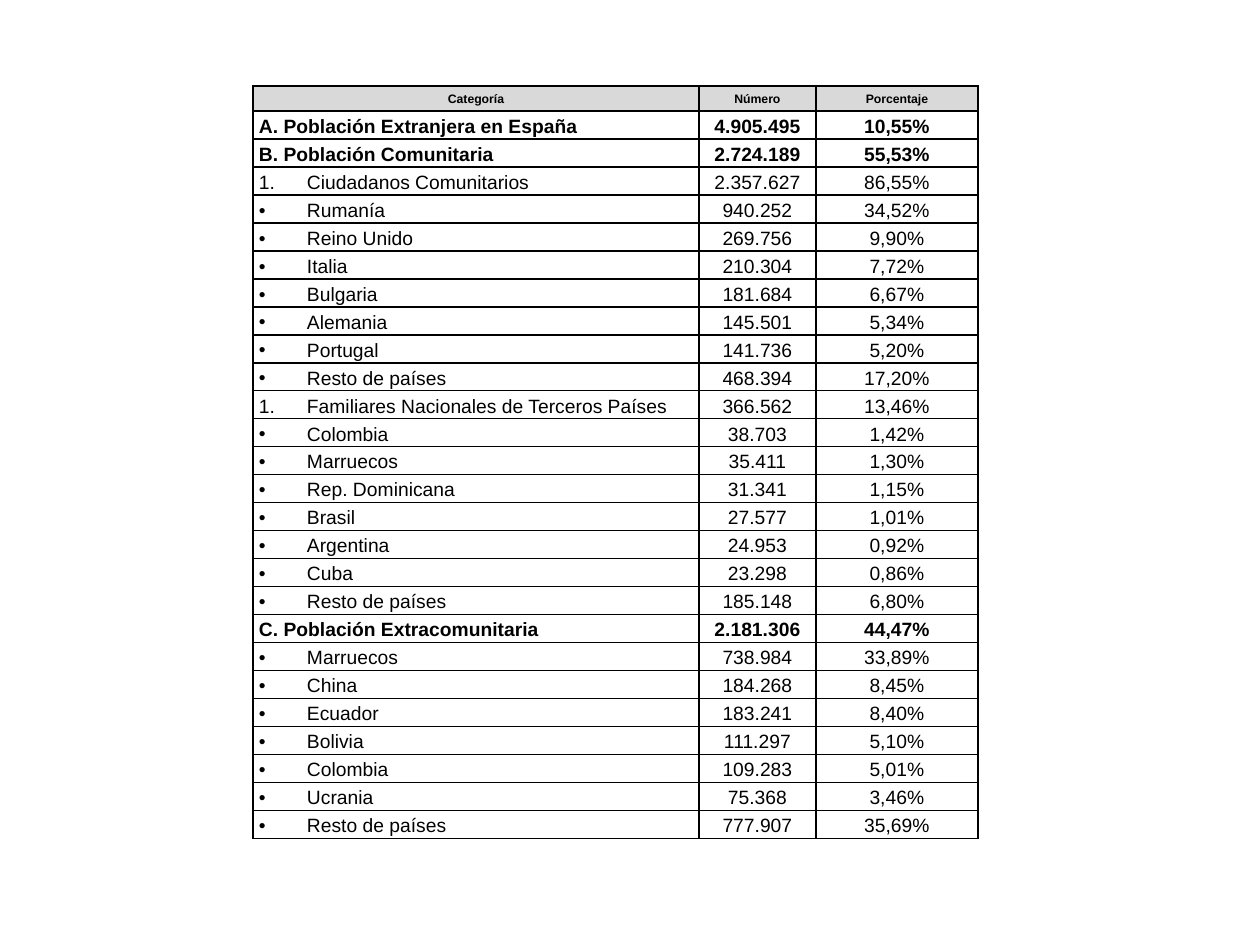
from lxml.etree import SubElement
from pptx import Presentation
from pptx.dml.color import RGBColor
from pptx.enum.text import MSO_ANCHOR, PP_ALIGN
from pptx.oxml import parse_xml
from pptx.oxml.ns import nsdecls, qn
from pptx.util import Emu, Pt

EMU_PER_PX = 914400 // 126
BLACK = RGBColor(0x00, 0x00, 0x00)
HEADER_GREY = RGBColor(0xD9, 0xD9, 0xD9)

TABLE_LEFT, TABLE_TOP = 253, 86
COLUMN_WIDTHS = (446, 117, 162)
HEADER_HEIGHT, ROW_HEIGHT = 25, 28
CELL_MARGIN, INDENT = 6, 48

HEADINGS = ("Categoría", "Número", "Porcentaje")
SECTION, NUMBERED, BULLETED = "section", "numbered", "bulleted"
POPULATION = (
    (SECTION, "A. Población Extranjera en España", "4.905.495", "10,55%"),
    (SECTION, "B. Población Comunitaria", "2.724.189", "55,53%"),
    (NUMBERED, "Ciudadanos Comunitarios", "2.357.627", "86,55%"),
    (BULLETED, "Rumanía", "940.252", "34,52%"),
    (BULLETED, "Reino Unido", "269.756", "9,90%"),
    (BULLETED, "Italia", "210.304", "7,72%"),
    (BULLETED, "Bulgaria", "181.684", "6,67%"),
    (BULLETED, "Alemania", "145.501", "5,34%"),
    (BULLETED, "Portugal", "141.736", "5,20%"),
    (BULLETED, "Resto de países", "468.394", "17,20%"),
    (NUMBERED, "Familiares Nacionales de Terceros Países", "366.562", "13,46%"),
    (BULLETED, "Colombia", "38.703", "1,42%"),
    (BULLETED, "Marruecos", "35.411", "1,30%"),
    (BULLETED, "Rep. Dominicana", "31.341", "1,15%"),
    (BULLETED, "Brasil", "27.577", "1,01%"),
    (BULLETED, "Argentina", "24.953", "0,92%"),
    (BULLETED, "Cuba", "23.298", "0,86%"),
    (BULLETED, "Resto de países", "185.148", "6,80%"),
    (SECTION, "C. Población Extracomunitaria", "2.181.306", "44,47%"),
    (BULLETED, "Marruecos", "738.984", "33,89%"),
    (BULLETED, "China", "184.268", "8,45%"),
    (BULLETED, "Ecuador", "183.241", "8,40%"),
    (BULLETED, "Bolivia", "111.297", "5,10%"),
    (BULLETED, "Colombia", "109.283", "5,01%"),
    (BULLETED, "Ucrania", "75.368", "3,46%"),
    (BULLETED, "Resto de países", "777.907", "35,69%"),
)


def px(length):
    return Emu(length * EMU_PER_PX)


def add_borders(cell):
    properties = cell._tc.get_or_add_tcPr()
    # Border lines must come before the fill
    for position, side in enumerate(("lnL", "lnR", "lnT", "lnB")):
        properties.insert(position, parse_xml(
            f'<a:{side} {nsdecls("a")} w="{Pt(1)}"><a:solidFill>'
            f'<a:srgbClr val="{BLACK}"/></a:solidFill></a:{side}>'))


def add_list_marker(paragraph, kind):
    properties = paragraph._p.get_or_add_pPr()
    properties.set("marL", str(px(INDENT)))
    properties.set("indent", str(px(-INDENT)))
    SubElement(properties, qn("a:buFont"), typeface="Arial")
    if kind == NUMBERED:
        SubElement(properties, qn("a:buAutoNum"), type="arabicPeriod")
    else:
        SubElement(properties, qn("a:buChar"), char="•")


def write_cell(cell, text, size, bold, align, fill=None):
    cell.margin_left = cell.margin_right = px(CELL_MARGIN)
    cell.margin_top = cell.margin_bottom = 0
    cell.vertical_anchor = MSO_ANCHOR.MIDDLE
    if fill is None:
        cell.fill.background()
    else:
        cell.fill.solid()
        cell.fill.fore_color.rgb = fill
    add_borders(cell)

    cell.text = text
    paragraph = cell.text_frame.paragraphs[0]
    paragraph.alignment = align
    paragraph.line_spacing = 1.15
    font = paragraph.font
    font.name, font.size, font.bold = "Arial", Pt(size), bold
    font.color.rgb = BLACK
    return paragraph


def add_population_table(slide):
    height = HEADER_HEIGHT + ROW_HEIGHT * len(POPULATION)
    table = slide.shapes.add_table(
        len(POPULATION) + 1, len(HEADINGS), px(TABLE_LEFT), px(TABLE_TOP),
        px(sum(COLUMN_WIDTHS)), px(height)).table
    table.first_row = table.horz_banding = False
    for column, width in zip(table.columns, COLUMN_WIDTHS):
        column.width = px(width)

    # Header row
    table.rows[0].height = px(HEADER_HEIGHT)
    for column, heading in enumerate(HEADINGS):
        write_cell(table.cell(0, column), heading, 7, True,
                   PP_ALIGN.CENTER, HEADER_GREY)

    # Sections and their countries
    for row, (kind, category, *figures) in enumerate(POPULATION, start=1):
        table.rows[row].height = px(ROW_HEIGHT)
        bold = kind == SECTION
        label = write_cell(table.cell(row, 0), category, 11, bold, PP_ALIGN.LEFT)
        if kind != SECTION:
            add_list_marker(label, kind)
        for column, figure in enumerate(figures, start=1):
            write_cell(table.cell(row, column), figure, 11, bold, PP_ALIGN.CENTER)


def main():
    presentation = Presentation()
    presentation.slide_width, presentation.slide_height = px(1260), px(945)
    blank_layout = presentation.slide_layouts[6]
    add_population_table(presentation.slides.add_slide(blank_layout))
    presentation.save("out.pptx")


if __name__ == "__main__":
    main()
